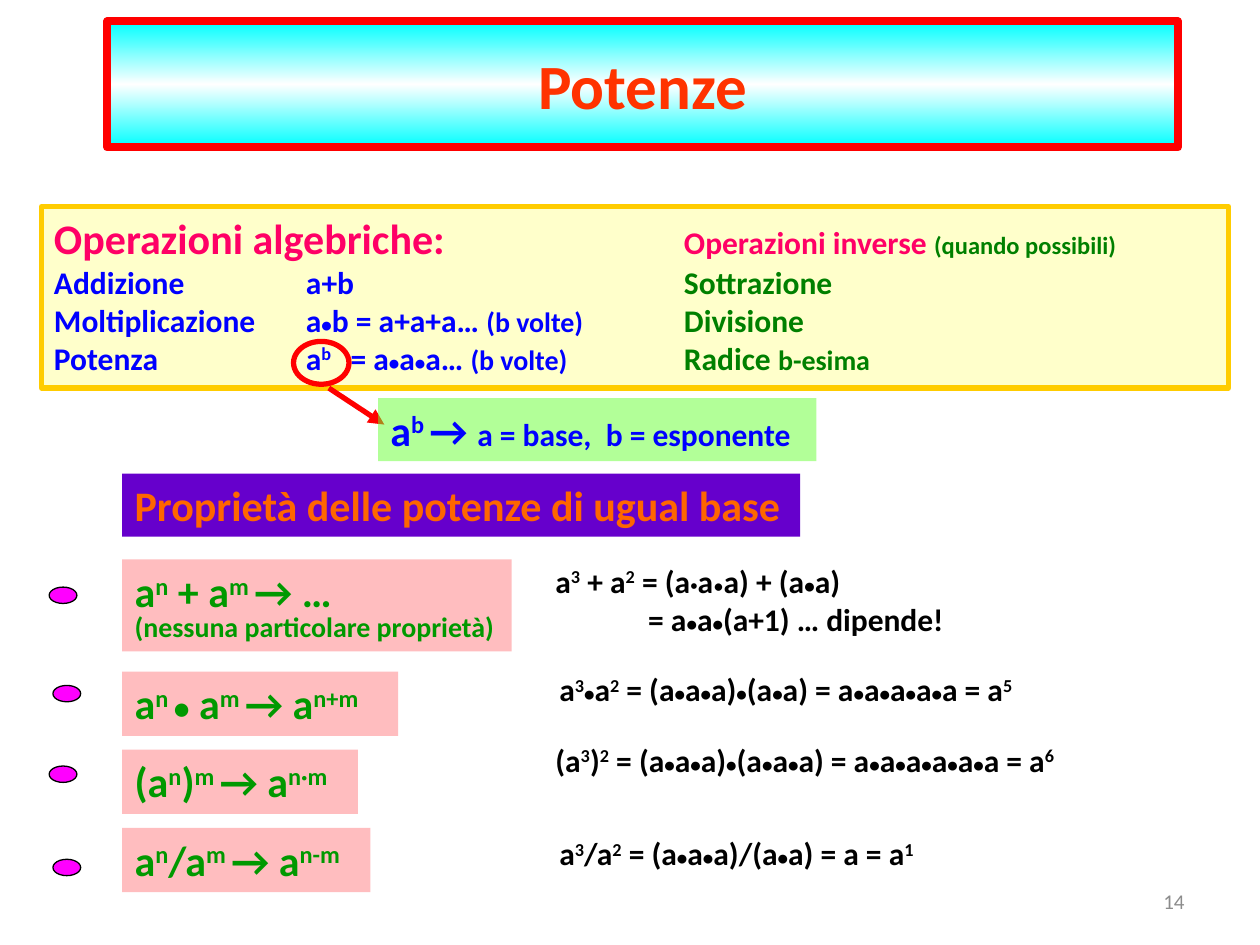
"""Build the slide on powers and their properties."""
from copy import deepcopy
from itertools import groupby

from lxml.etree import SubElement
from pptx import Presentation
from pptx.dml.color import RGBColor
from pptx.enum.shapes import MSO_CONNECTOR, MSO_SHAPE
from pptx.enum.text import MSO_ANCHOR as Anchor, PP_ALIGN as Align
from pptx.oxml.ns import qn
from pptx.util import Pt

COLOURS = {
    "title": "FF3300", "red": "FF0000", "cyan": "00FFFF", "white": "FFFFFF",
    "cream": "FFFF99", "gold": "FFCC00", "pink": "FF0066", "blue": "0000FF",
    "green": "008000", "lime": "66FF33", "purple": "6600CC", "orange": "FF6600",
    "salmon": "FF7C80", "rule": "009900", "magenta": "FF00FF",
    "black": "000000", "grey": "8C8C8C",
}
DOT_SIZES = {24: 18, 18: 12}


def rgb(name):
    """Return the named colour."""
    return RGBColor.from_string(COLOURS[name])


def add_runs(paragraph, formula, size, colour, bold=True, italic=False, face="Calibri"):
    """Write a formula in runs, raising what stands between carets and shrinking dots."""
    for index, part in enumerate(formula.split("^")):
        for is_dot, letters in groupby(part, lambda letter: letter == "•"):
            run = paragraph.add_run()
            run.text = "".join(letters)
            font = run.font
            font.name, font.bold, font.italic = face, bold, italic
            font.size = Pt(DOT_SIZES[size] if is_dot else size)
            font.color.rgb = rgb(colour)
            if index % 2:
                run._r.get_or_add_rPr().set("baseline", "30000")


def write_lines(shape, lines, anchor=Anchor.TOP, align=Align.LEFT):
    """Fill a shape with lines, each a list of run arguments, and return the paragraphs."""
    frame = shape.text_frame
    frame.word_wrap = True
    frame.vertical_anchor = anchor
    for index, pieces in enumerate(lines):
        paragraph = frame.add_paragraph() if index else frame.paragraphs[0]
        paragraph.alignment = align
        for formula, size, colour, *style in pieces:
            add_runs(paragraph, formula, size, colour, *style)
    return frame.paragraphs


def set_tabs(paragraph, stops):
    """Give a paragraph left tab stops."""
    tab_list = SubElement(paragraph._p.get_or_add_pPr(), qn("a:tabLst"))
    for stop in stops:
        SubElement(tab_list, qn("a:tab"), pos=str(Pt(stop)), algn="l")


def add_text(slide, box, lines, **layout):
    """Add a text box."""
    return write_lines(slide.shapes.add_textbox(*map(Pt, box)), lines, **layout)


def add_figure(slide, kind, box, fill=None, line=None, width=0.75, opacity=100):
    """Add a preset shape with its fill and outline."""
    figure = slide.shapes.add_shape(kind, *map(Pt, box))
    figure.shadow.inherit = False
    if fill:
        figure.fill.solid()
        figure.fill.fore_color.rgb = rgb(fill)
        if opacity < 100:
            tint = figure._element.spPr.find(f".//{qn('a:srgbClr')}")
            SubElement(tint, qn("a:alpha"), val=str(opacity * 1000))
    else:
        figure.fill.background()
    if line:
        figure.line.color.rgb = rgb(line)
        figure.line.width = Pt(width)
    else:
        figure.line.fill.background()
    return figure


def add_panel(slide, box, lines, fill, **look):
    """Add a filled rectangle with text."""
    return write_lines(add_figure(slide, MSO_SHAPE.RECTANGLE, box, fill, **look), lines)


def add_arrow(slide, start, end):
    """Add a red arrow."""
    arrow = slide.shapes.add_connector(MSO_CONNECTOR.STRAIGHT, *map(Pt, start + end))
    arrow.line.color.rgb = rgb("red")
    arrow.line.width = Pt(3)
    SubElement(arrow.line._get_or_add_ln(), qn("a:tailEnd"), type="triangle")
    SubElement(arrow._element.spPr, qn("a:effectLst"))


def format_title(title):
    """Place the title on its mirrored gradient banner."""
    title.left, title.top, title.width, title.height = map(Pt, (61.2, 12.24, 612, 72))
    title.fill.gradient()
    title.fill.gradient_angle = 90
    stops = title._element.spPr.find(f".//{qn('a:gsLst')}")
    middle = deepcopy(stops[0])
    middle.set("pos", "50000")
    stops.insert(1, middle)
    for stop, name in zip(title.fill.gradient_stops, ("cyan", "white", "cyan")):
        stop.color.rgb = rgb(name)
    title.line.color.rgb = rgb("red")
    title.line.width = Pt(4.5)
    write_lines(title, [[("Potenze", 36, "title")]], Anchor.MIDDLE, Align.CENTER)


def add_operations(slide):
    """Add the panel of operations and their inverses."""
    lines = [
        [("Operazioni algebriche:\t", 24, "pink"), ("Operazioni inverse ", 18, "pink"),
         ("(quando possibili)", 14, "green")],
        [("Addizione\ta+b\t", 18, "blue"), ("Sottrazione", 18, "green")],
        [("Moltiplicazione\ta•b = a+a+a… ", 18, "blue"), ("(b volte)\t", 16, "blue"),
         ("Divisione", 18, "green")],
        [("Potenza\ta^b^\t= a•a•a… ", 18, "blue"), ("(b volte)\t", 16, "blue"),
         ("Radice ", 18, "green"), ("b-esima", 16, "green")],
    ]
    tab_stops = [(360,), (144, 360), (144, 360), (144, 169.5, 360)]
    paragraphs = add_panel(slide, (23.76, 118.08, 678.24, 103.68), lines, "cream",
                           line="gold", width=3, opacity=50)
    for paragraph, stops in zip(paragraphs, tab_stops):
        set_tabs(paragraph, stops)


def add_property(slide, rule_box, rule, example_box, example, marker):
    """Add one property: its marker, its rule and a worked example."""
    add_panel(slide, (69.84, *rule_box), rule, "salmon", opacity=50)
    add_figure(slide, MSO_SHAPE.OVAL, (*marker, 15.84, 9.36), "magenta", "black")
    return rule_box and add_text(slide, example_box, example)


def add_properties(slide):
    """Add the four properties of powers with the same base."""
    paragraphs = add_property(
        slide, (319.68, 222.48, 52.56),
        [[("a^n^ + a^m ^→ …", 24, "rule")], [("(nessuna particolare proprietà)", 16, "rule")]],
        (310.32, 317.52, 238.32, 51.12),
        [[("a^3^ + a^2^ = (a", 18, "black"), ("•", 18, "black", False, False, "Arial"),
          ("a", 18, "black"), ("•", 18, "black", False, True), ("a) + (a•a)", 18, "black")],
         [("= a•a•(a+1) … dipende!", 18, "black")]],
        (28.08, 335.52))
    paragraphs[1]._p.get_or_add_pPr().set("marL", str(Pt(53)))
    slide.shapes[-3].text_frame.paragraphs[1].line_spacing = 0.8

    properties = [
        (383.76, 157.68, "a^n ^• a^m ^→ a^n+m^", 379.44, 281.52,
         "a^3^•a^2^ = (a•a•a)•(a•a) = a•a•a•a•a = a^5^", 391.68, 2.16),
        (428.4, 134.64, "(a^n^)^m ^→ a^n·m^", 419.76, 304.56,
         "(a^3^)^2^ = (a•a•a)•(a•a•a) = a•a•a•a•a•a = a^6^", 437.76, 0),
        (473.04, 141.84, "a^n^/a^m ^→ a^n-m^", 473.04, 221.76,
         "a^3^/a^2^ = (a•a•a)/(a•a) = a = a^1^", 491.04, 2.16),
    ]
    for top, width, rule, example_top, example_width, example, marker_top, shift in properties:
        add_property(slide, (top, width, 36.72), [[(rule, 24, "rule")]],
                     (310.32 + shift, example_top, example_width, 28.8),
                     [[(example, 18, "black")]], (28.08 + shift, marker_top))


def main():
    """Build and save the slide."""
    deck = Presentation()
    deck.slide_width, deck.slide_height = Pt(720), Pt(540)
    slide = deck.slides.add_slide(deck.slide_layouts[5])
    format_title(slide.shapes.title)
    add_operations(slide)
    add_panel(slide, (69.84, 270.72, 387.36, 36),
              [[("Proprietà delle potenze di ugual base", 24, "orange")]], "purple")
    add_figure(slide, MSO_SHAPE.OVAL, (167.76, 195.12, 31.68, 24.48), line="red", width=3)
    add_arrow(slide, (187.92, 221.76), (219.6, 242.64))
    add_panel(slide, (216, 227.52, 250.56, 36),
              [[("a^b ^→ ", 24, "blue"), ("a = base,  b = esponente", 18, "blue")]],
              "lime", opacity=50)
    add_properties(slide)
    add_text(slide, (516.24, 500.4, 167.76, 28.8), [[("14", 12, "grey", False)]],
             anchor=Anchor.MIDDLE, align=Align.RIGHT)
    deck.save("out.pptx")


if __name__ == "__main__":
    main()
